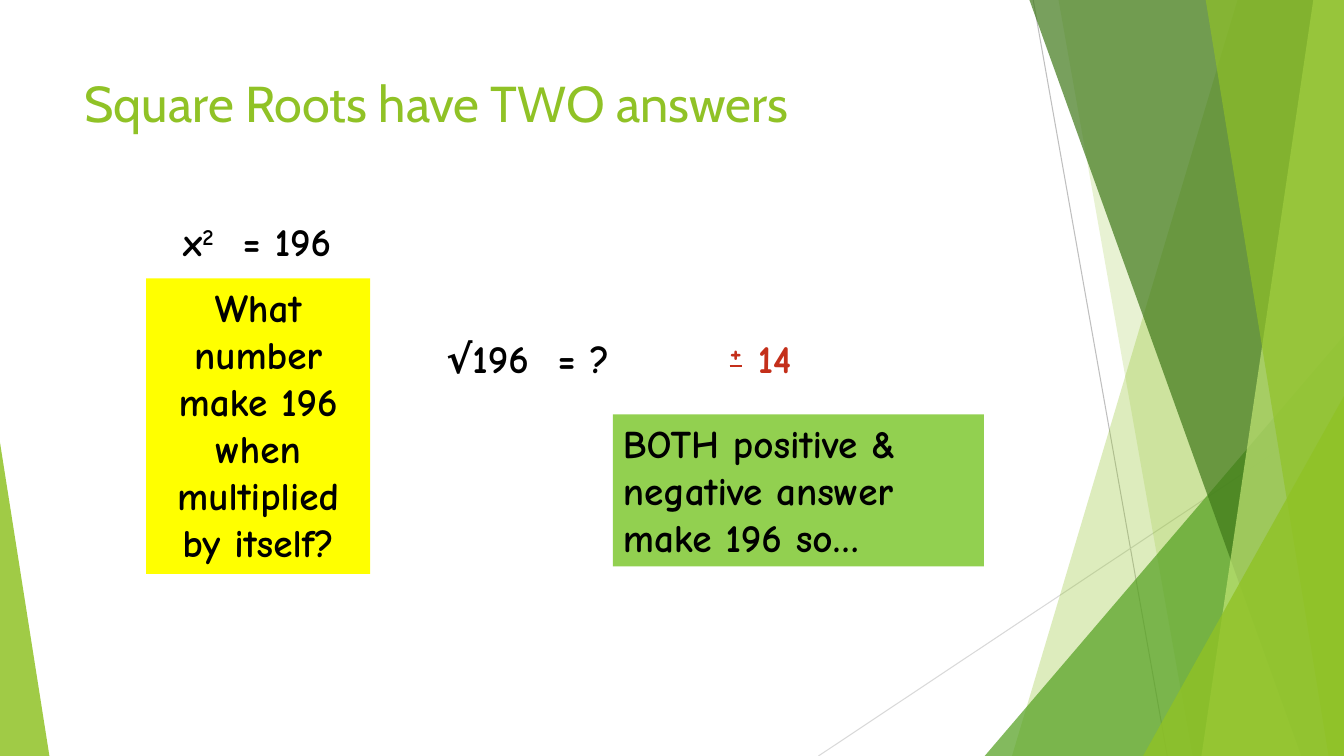
import dataclasses

import pptx
import pptx.dml.color
import pptx.enum.shapes
import pptx.enum.text
import pptx.oxml
import pptx.oxml.ns
import pptx.util

Pt = pptx.util.Pt
SHAPE = pptx.enum.shapes.MSO_SHAPE
ALIGN = pptx.enum.text.PP_ALIGN
WIDTH, HEIGHT = 960, 540


@dataclasses.dataclass(frozen=True)
class Theme:
    title_font: str = "Cabin"
    body_font: str = "Comic Neue"
    title_size: int = 36
    body_size: int = 28
    sign_size: int = 20
    lime: str = "90C226"
    leaf: str = "54A021"
    forest: str = "3F7819"
    pale: str = "C0E474"
    steep_line: str = "BFBFBF"
    shallow_line: str = "D9D9D9"
    question: str = "FFFF00"
    reason: str = "92D050"
    text: str = "000000"
    answer: str = "C42F1A"


def rgb(color):
    return pptx.dml.color.RGBColor.from_string(color)


def add_xml(parent, tag, **attributes):
    child = pptx.oxml.parse_xml(f"<{tag} {pptx.oxml.ns.nsdecls('a')}/>")
    for name, value in attributes.items():
        child.set(name, str(value))
    parent.append(child)
    return child


class SlideBuilder:
    def __init__(self, slide, theme):
        self.slide = slide
        self.theme = theme

    def paint(self, s, color, opacity=100):
        s.shadow.inherit = False
        s.line.fill.background()
        s.fill.solid()
        s.fill.fore_color.rgb = rgb(color)
        if opacity < 100:
            fill = s._element.spPr.find(pptx.oxml.ns.qn("a:solidFill"))
            add_xml(fill[0], "a:alpha", val=opacity * 1000)

    def line(self, x1, y1, x2, y2, color):
        s = self.slide.shapes.add_connector(
            pptx.enum.shapes.MSO_CONNECTOR.STRAIGHT, Pt(x1), Pt(y1), Pt(x2), Pt(y2))
        s.line.color.rgb = rgb(color)
        s.line.width = Pt(0.75)
        add_xml(s._element.spPr, "a:effectLst")

    def facet(self, top_x, bottom_x, color, opacity):
        top = Pt(-0.7)
        builder = self.slide.shapes.build_freeform(Pt(top_x), top)
        builder.add_line_segments([
            (Pt(WIDTH), top), (Pt(WIDTH), Pt(HEIGHT)), (Pt(bottom_x), Pt(HEIGHT))])
        self.paint(builder.convert_to_shape(), color, opacity)

    def corner(self, x, y, width, apex, color, opacity):
        s = self.slide.shapes.add_shape(
            SHAPE.ISOSCELES_TRIANGLE, Pt(x), Pt(y), Pt(width), Pt(HEIGHT - y))
        s.adjustments[0] = apex
        self.paint(s, color, opacity)

    def set_text(self, s, text, font, size, color, bold=True, align=ALIGN.LEFT, tab=None):
        tf = s.text_frame
        tf.word_wrap = True
        tf.vertical_anchor = pptx.enum.text.MSO_ANCHOR.TOP
        p = tf.paragraphs[0]
        p.alignment = align
        if tab:
            stops = add_xml(p._p.get_or_add_pPr(), "a:tabLst")
            add_xml(stops, "a:tab", pos=Pt(tab), algn="l")
        for part in [text] if isinstance(text, str) else text:
            r = p.add_run()
            r.text = part
            r.font.name = font
            r.font.size = Pt(size)
            r.font.bold = bold
            r.font.color.rgb = rgb(color)
        return p

    def title(self, text, x, y, width, height):
        s = self.slide.shapes.add_textbox(Pt(x), Pt(y), Pt(width), Pt(height))
        self.set_text(s, text, self.theme.title_font, self.theme.title_size,
                      self.theme.lime, bold=False)

    def label(self, text, x, y, width, height=41, size=None, color=None, tab=None):
        s = self.slide.shapes.add_textbox(Pt(x), Pt(y), Pt(width), Pt(height))
        return self.set_text(s, text, self.theme.body_font, size or self.theme.body_size,
                             color or self.theme.text, tab=tab)

    def panel(self, text, x, y, width, height, fill, align=ALIGN.LEFT):
        s = self.slide.shapes.add_shape(
            SHAPE.RECTANGLE, Pt(x), Pt(y), Pt(width), Pt(height))
        self.paint(s, fill)
        self.set_text(s, text, self.theme.body_font, self.theme.body_size,
                      self.theme.text, align=align)


def draw_backdrop(b):
    t = b.theme
    b.line(738, 0, 833.8, HEIGHT, t.steep_line)
    b.line(WIDTH, 290.2, 584.6, HEIGHT, t.shallow_line)
    b.facet(884.2, 722.9, t.lime, 30)
    b.facet(756, 851.8, t.lime, 20)
    b.corner(703.4, 239.8, 256.6, 1, t.leaf, 72)
    b.facet(735.1, 929.5, t.forest, 70)
    b.facet(938.2, 858.2, t.pale, 70)
    b.facet(861.1, 949, t.lime, 65)
    b.corner(816.5, 283, 143.5, 1, t.lime, 80)
    b.corner(0, 316.1, 35.3, 0, t.lime, 85)


def draw_lesson(b):
    t = b.theme
    b.title("Square Roots have TWO answers", 53.3, 48.2, 676.8, 103.7)
    equation = b.label(["x", "2", "\t= 196"], 123.8, 152, 160, tab=42.5)
    equation.runs[1].font._element.set("baseline", "30000")
    b.panel("What number make 196 when multiplied by itself?",
            104.4, 198.9, 160, 211, t.question, ALIGN.CENTER)
    root_y = 235.4
    b.label("√196\t= ?", 311.8, root_y, 160, tab=79.5)
    b.label("14", 534.2, root_y, 58.3, color=t.answer)
    sign = b.label("+", 514.1, root_y, 30.2, 31.7, t.sign_size, t.answer)
    sign.runs[0].font.underline = True
    b.panel("BOTH positive & negative answer make 196 so…",
            437.8, 295.9, 265, 108.7, t.reason)


def main():
    prs = pptx.Presentation()
    prs.slide_width = Pt(WIDTH)
    prs.slide_height = Pt(HEIGHT)
    builder = SlideBuilder(prs.slides.add_slide(prs.slide_layouts[6]), Theme())
    draw_backdrop(builder)
    draw_lesson(builder)
    prs.save("out.pptx")


if __name__ == "__main__":
    main()
